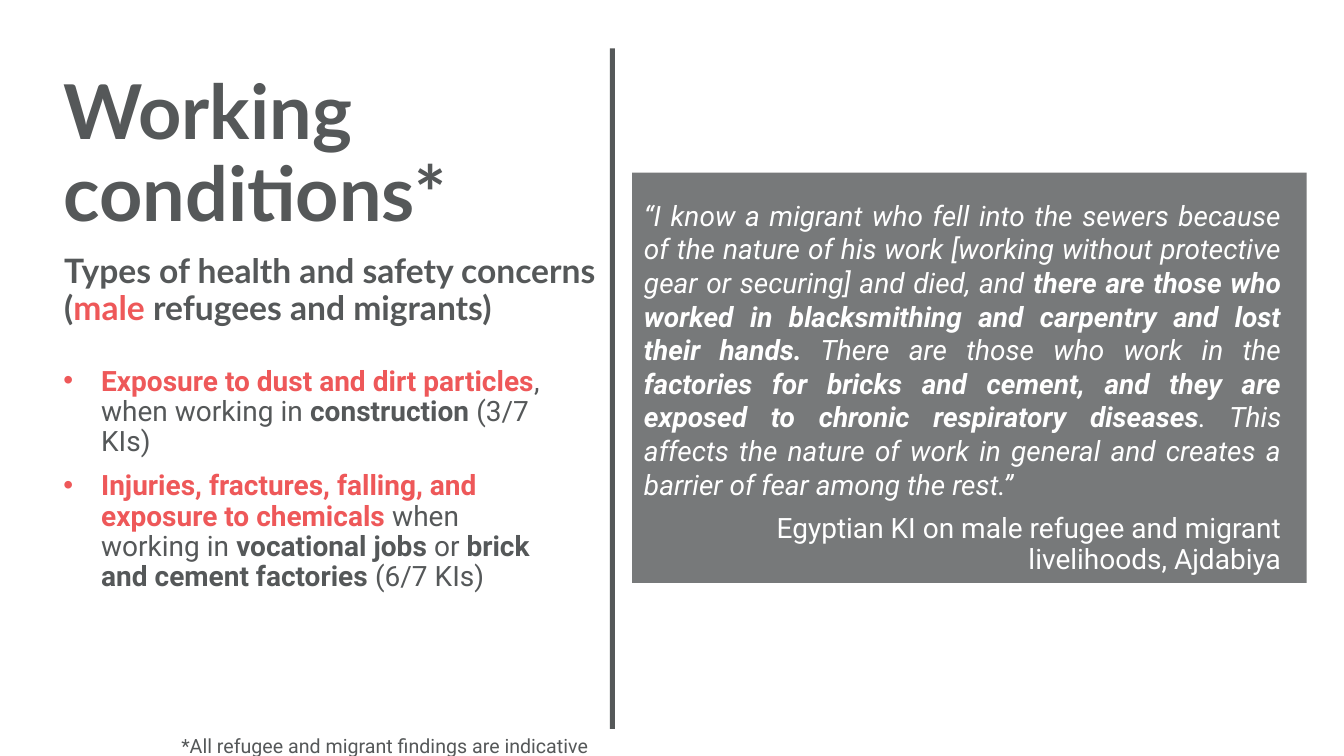
"""Build the slide on working conditions of male refugees and migrants."""
from typing import NamedTuple

from lxml.etree import SubElement
from pptx import Presentation
from pptx.dml.color import RGBColor
from pptx.enum.shapes import MSO_SHAPE
from pptx.enum.text import MSO_ANCHOR, PP_ALIGN
from pptx.oxml.ns import qn
from pptx.util import Cm, Pt

GREY, RED, WHITE = "555859", "EE5859", "FFFFFF"


class Box(NamedTuple):
    left: float
    top: float
    width: float
    height: float


class Run(NamedTuple):
    text: str
    bold: bool = False
    color: str = GREY
    slant: bool = False


class Para(NamedTuple):
    runs: list[Run]
    align: PP_ALIGN = PP_ALIGN.LEFT
    line: float = 0.9
    bullet: bool = False


def paint(target, color: str) -> None:
    target.rgb = RGBColor.from_string(color)


def add_bar(slide, box: Box, color: str, alpha: int = 100) -> None:
    shape = slide.shapes.add_shape(MSO_SHAPE.RECTANGLE, *map(Cm, box))
    shape.shadow.inherit = False
    shape.line.fill.background()
    shape.fill.solid()
    paint(shape.fill.fore_color, color)
    if alpha < 100:
        tone = shape.fill._xPr.find(qn("a:solidFill"))[0]
        SubElement(tone, qn("a:alpha"), val=str(alpha * 1000))


def add_text(slide, box: Box, paras: list[Para], *, size: int, face: str = "Roboto") -> None:
    frame = slide.shapes.add_textbox(*map(Cm, box)).text_frame
    frame.word_wrap = True
    frame.vertical_anchor = MSO_ANCHOR.TOP
    for rank, para in enumerate(paras):
        item = frame.add_paragraph() if rank else frame.paragraphs[0]
        item.alignment = para.align
        item.line_spacing = para.line
        if rank:
            item.space_before = Pt(10)
        if para.bullet:
            props = item._p.get_or_add_pPr()
            props.set("marL", str(Cm(0.95)))
            props.set("indent", str(Cm(-0.95)))
            SubElement(props, qn("a:buFont"), typeface="Arial")
            SubElement(props, qn("a:buChar"), char="•")
        for part in para.runs:
            run = item.add_run()
            run.text = part.text
            font = run.font
            font.name, font.size = face, Pt(size)
            font.bold, font.italic = part.bold, part.slant
            paint(font.color, part.color)


def quote(text: str, bold: bool = False) -> Run:
    return Run(text, bold, WHITE, True)


TITLE = [Para([Run("Working conditions*", True)])]
TOPIC = [Para([
    Run("Types of health and safety concerns (", True),
    Run("male", True, RED),
    Run(" refugees and migrants)", True),
])]
RISKS = [
    Para([
        Run("Exposure to dust and dirt particles", True, RED),
        Run(", when working in "),
        Run("construction", True),
        Run(" (3/7 KIs)"),
    ], bullet=True),
    Para([
        Run("Injuries, fractures, falling, and exposure to chemicals ", True, RED),
        Run("when working in "),
        Run("vocational jobs ", True),
        Run("or "),
        Run("brick and cement factories ", True),
        Run("(6/7 KIs)"),
    ], bullet=True),
]
QUOTE = [
    Para([
        quote("“I know a migrant who fell into the sewers because of the nature of his work "
              "[working without protective gear or securing] and died, and "),
        quote("there are those who worked in blacksmithing and carpentry and lost their hands.", True),
        quote(" There are those who work in the "),
        quote("factories for bricks and cement, and they are exposed to chronic "
              "respiratory diseases", True),
        quote(". This affects the nature of work in general and creates a barrier of fear "
              "among the rest.”"),
    ], PP_ALIGN.JUSTIFY, 1.0),
    Para([Run("Egyptian KI on male refugee and migrant livelihoods, Ajdabiya", color=WHITE)],
         PP_ALIGN.RIGHT),
]
NOTE = [Para([Run("*All refugee and migrant findings are indicative")], line=1.0)]


def main() -> None:
    deck = Presentation()
    deck.slide_width, deck.slide_height = Cm(33.87), Cm(19.05)
    slide = deck.slides.add_slide(deck.slide_layouts[6])
    add_bar(slide, Box(15.37, 1.22, 0.13, 17.15), GREY)
    add_bar(slide, Box(15.93, 4.35, 17, 10.34), GREY, alpha=80)
    add_text(slide, Box(1.35, 1.75, 13.13, 4.09), TITLE, size=54, face="Lato")
    add_text(slide, Box(1.37, 6.3, 13.94, 2.44), TOPIC, size=24, face="Lato")
    add_text(slide, Box(1.35, 9.12, 13.13, 8.18), RISKS, size=20)
    add_text(slide, Box(15.98, 4.87, 16.56, 9.8), QUOTE, size=20)
    add_text(slide, Box(4.32, 18.36, 23.24, 0.86), NOTE, size=14)
    deck.save("out.pptx")


if __name__ == "__main__":
    main()
